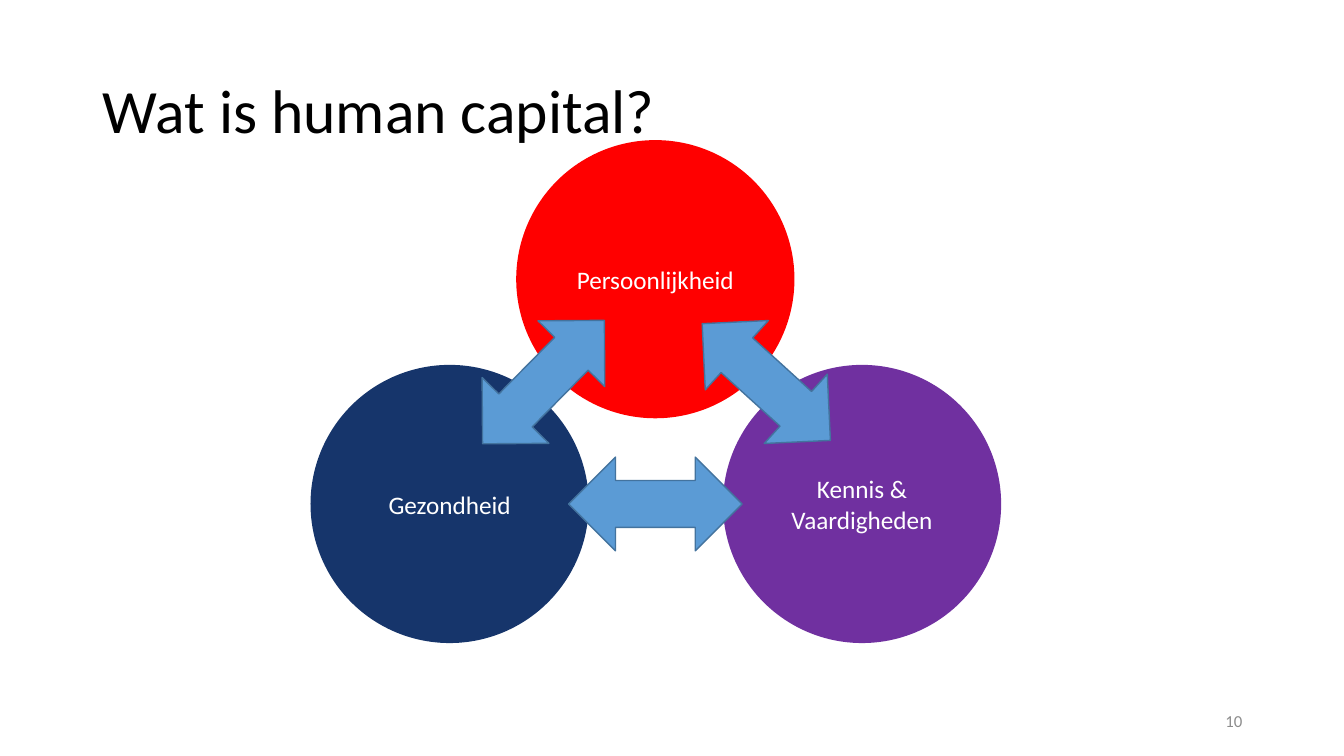
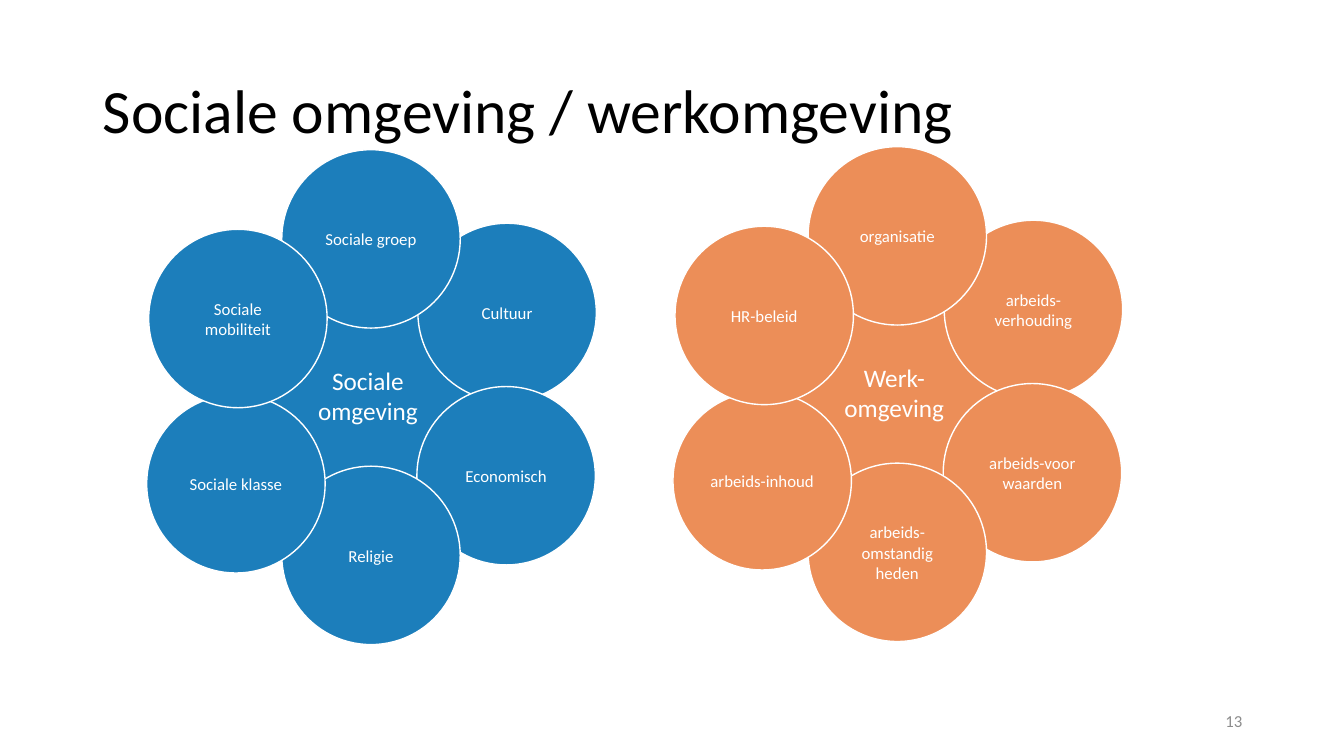
from dataclasses import dataclass

from pptx import Presentation
from pptx.dml.color import RGBColor
from pptx.enum.shapes import MSO_SHAPE
from pptx.enum.text import MSO_ANCHOR, PP_ALIGN
from pptx.util import Inches, Pt

OVAL = MSO_SHAPE.OVAL
ARROW = MSO_SHAPE.LEFT_RIGHT_ARROW
MIDDLE = MSO_ANCHOR.MIDDLE
LEFT, CENTER, RIGHT = PP_ALIGN.LEFT, PP_ALIGN.CENTER, PP_ALIGN.RIGHT

FONT = "Calibri"
BLACK, WHITE, GRAY = "000000", "FFFFFF", "8C8C8C"
RED, PURPLE, NAVY = "FF0000", "7030A0", "16356B"
SKY, STEEL = "5B9BD5", "43739E"
BLUE, ORANGE = "1C7EBB", "EC8E58"

TITLE_ONLY = 5
DISC = 2.76
HUB = 2.17
PETAL = 1.77
PETALS = [(1.38, -0.82), (1.37, 0.8), (0.03, 1.59),
          (0.03, -1.55), (-1.31, 0.88), (-1.29, -0.76)]


@dataclass
class Disc:
    text: str
    x: float
    y: float
    fill: str
    size: float = DISC
    points: int = 18
    line: str = ""


@dataclass
class Arrow:
    x: float
    y: float
    turn: float = 0


@dataclass
class Wheel:
    text: str
    x: float
    y: float
    fill: str
    labels: list[str]


DISCS = [
    Disc("Persoonlijkheid", 6.5, 2.77, RED),
    Disc("Kennis & Vaardigheden", 8.55, 5, PURPLE),
    Disc("Gezondheid", 4.46, 5, NAVY),
]
ARROWS = [Arrow(6.5, 5), Arrow(7.6, 3.79, 42.3), Arrow(5.39, 3.79, 134.6)]
WHEELS = [
    Wheel("Sociale omgeving", 3.65, 3.92, BLUE,
          ["Cultuur", "Economisch", "Religie", "Sociale groep",
           "Sociale klasse", "Sociale mobiliteit"]),
    Wheel("Werk-omgeving", 8.87, 3.89, ORANGE,
          ["arbeids-verhouding", "arbeids-voor\vwaarden",
           "arbeids-omstandig\vheden", "organisatie",
           "arbeids-inhoud", "HR-beleid"]),
]


def color(code: str) -> RGBColor:
    return RGBColor.from_string(code)


def write(shape, text: str, points: int, code: str, align) -> None:
    frame = shape.text_frame
    frame.word_wrap = True
    frame.vertical_anchor = MIDDLE
    frame.text = text
    para = frame.paragraphs[0]
    para.alignment = align
    para.font.name = FONT
    para.font.size = Pt(points)
    para.font.color.rgb = color(code)


def place(slide, kind, x: float, y: float, wide: float, high: float,
          fill: str, line: str):
    shape = slide.shapes.add_shape(
        kind, Inches(x - wide / 2), Inches(y - high / 2), Inches(wide), Inches(high))
    shape.shadow.inherit = False
    shape.fill.solid()
    shape.fill.fore_color.rgb = color(fill)
    if line:
        shape.line.color.rgb = color(line)
        shape.line.width = Pt(1)
    else:
        shape.line.fill.background()
    return shape


def draw_disc(slide, disc: Disc) -> None:
    shape = place(slide, OVAL, disc.x, disc.y, disc.size, disc.size,
                  disc.fill, disc.line)
    write(shape, disc.text, disc.points, WHITE, CENTER)
    frame = shape.text_frame
    frame.margin_left = frame.margin_right = Inches(0.08)


def draw_arrow(slide, arrow: Arrow) -> None:
    shape = place(slide, ARROW, arrow.x, arrow.y, 1.72, 0.93, SKY, STEEL)
    shape.rotation = arrow.turn


def draw_wheel(slide, wheel: Wheel) -> None:
    draw_disc(slide, Disc(wheel.text, wheel.x, wheel.y, wheel.fill, HUB, 18, WHITE))
    for text, (dx, dy) in zip(wheel.labels, PETALS):
        draw_disc(slide, Disc(text, wheel.x + dx, wheel.y + dy,
                              wheel.fill, PETAL, 12, WHITE))


def add_slide(deck, text: str, number: int):
    slide = deck.slides.add_slide(deck.slide_layouts[TITLE_ONLY])
    title = slide.shapes.title
    title.left, title.top = Inches(0.92), Inches(0.4)
    title.width, title.height = Inches(11.5), Inches(1.45)
    write(title, text, 44, BLACK, LEFT)
    title.text_frame.paragraphs[0].line_spacing = 0.9
    box = slide.shapes.add_textbox(Inches(9.42), Inches(6.95), Inches(3), Inches(0.4))
    write(box, str(number), 12, GRAY, RIGHT)
    return slide


def main() -> None:
    deck = Presentation()
    deck.slide_width, deck.slide_height = Inches(13.33), Inches(7.5)

    slide = add_slide(deck, "Wat is human capital?", 10)
    for disc in DISCS:
        draw_disc(slide, disc)
    for arrow in ARROWS:
        draw_arrow(slide, arrow)

    slide = add_slide(deck, "Sociale omgeving / werkomgeving", 13)
    for wheel in WHEELS:
        draw_wheel(slide, wheel)

    deck.save("out.pptx")


if __name__ == "__main__":
    main()
